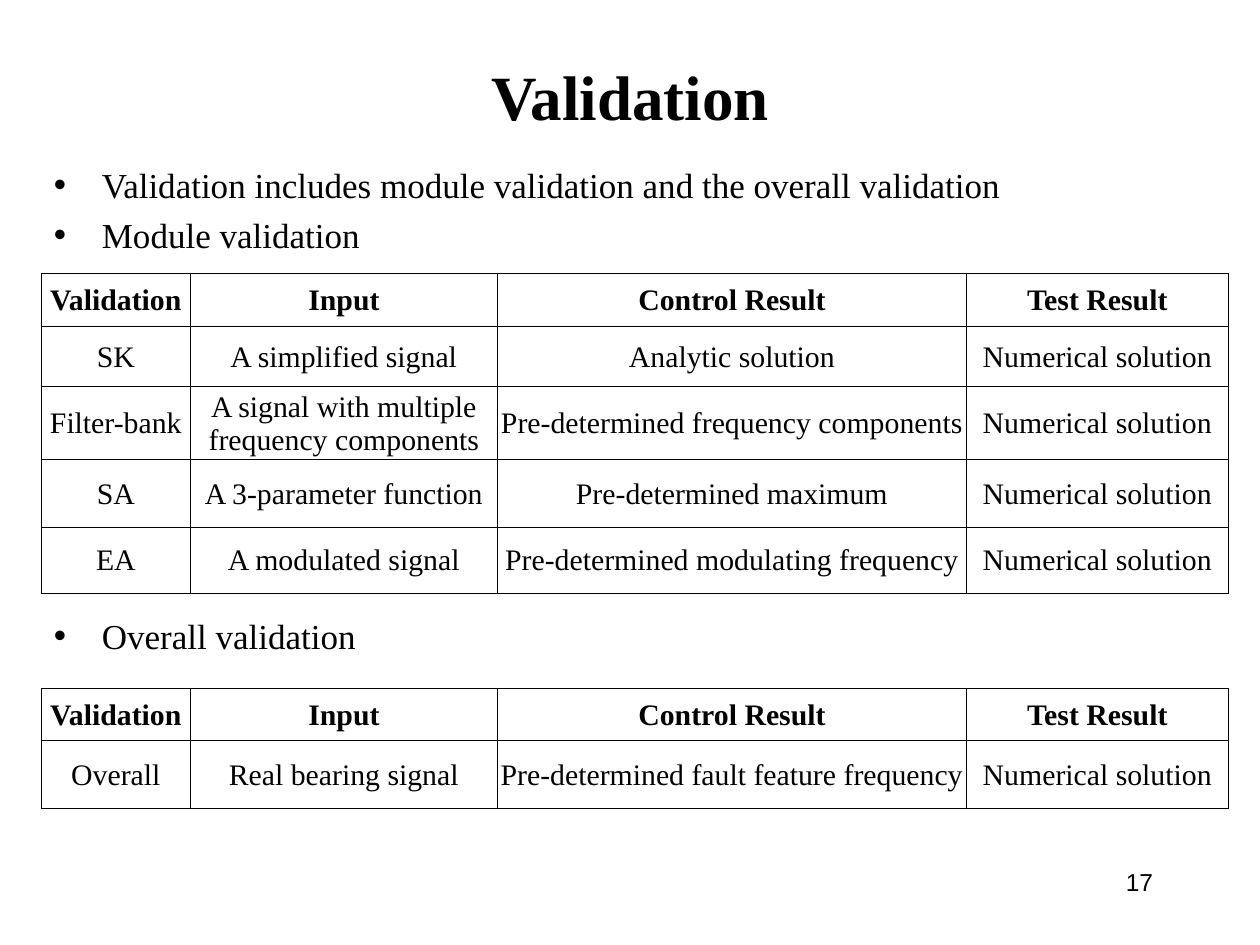
import lxml.etree
import pptx
import pptx.dml.color
import pptx.enum.text
import pptx.oxml.ns
import pptx.util

Inches = pptx.util.Inches
Pt = pptx.util.Pt
ALIGN = pptx.enum.text.PP_ALIGN
ANCHOR = pptx.enum.text.MSO_ANCHOR
qn = pptx.oxml.ns.qn

BLACK = "000000"
SERIF = "Times New Roman"
COLUMNS = [1.18, 2.44, 3.72, 2.08]
HEADER = ["Validation", "Input", "Control Result", "Test Result"]
NUMERICAL = "Numerical solution"
MODULES = [
    HEADER,
    ["SK", "A simplified signal", "Analytic solution", NUMERICAL],
    ["Filter-bank", "A signal with multiple frequency components",
     "Pre-determined frequency components", NUMERICAL],
    ["SA", "A 3-parameter function", "Pre-determined maximum", NUMERICAL],
    ["EA", "A modulated signal", "Pre-determined modulating frequency", NUMERICAL],
]
OVERALL = [
    HEADER,
    ["Overall", "Real bearing signal", "Pre-determined fault feature frequency", NUMERICAL],
]


def color(value):
    """Return the colour for a hex string."""
    return pptx.dml.color.RGBColor.from_string(value)


def write(p, text, size=20, font=SERIF, bold=False, align=ALIGN.LEFT, fill=BLACK):
    """Put formatted text into a paragraph."""
    p.alignment = align
    r = p.add_run()
    r.text = text
    r.font.size = Pt(size)
    r.font.name = font
    r.font.bold = bold
    r.font.color.rgb = color(fill)


def add_box(s, box, anchor=ANCHOR.TOP):
    """Add a wrapping text box and return its text frame."""
    tf = s.shapes.add_textbox(*map(Inches, box)).text_frame
    tf.word_wrap = True
    tf.vertical_anchor = anchor
    return tf


def add_title(s, box, text):
    """Add the centred slide title."""
    tf = add_box(s, box, ANCHOR.MIDDLE)
    write(tf.paragraphs[0], text, size=36, bold=True, align=ALIGN.CENTER)


def add_bullets(s, box, items):
    """Add a bulleted list with hanging indents."""
    tf = add_box(s, box)
    for i, item in enumerate(items):
        p = tf.add_paragraph() if i else tf.paragraphs[0]
        write(p, item)
        p.space_before = Pt(4.6)
        pPr = p._p.get_or_add_pPr()
        pPr.set("marL", str(Inches(0.38)))
        pPr.set("indent", str(Inches(-0.38)))
        lxml.etree.SubElement(pPr, qn("a:buFont"), typeface="Arial")
        lxml.etree.SubElement(pPr, qn("a:buChar"), char="•")


def add_borders(cell, width=0.5, line=BLACK):
    """Draw a thin line on all four sides of a cell."""
    tcPr = cell._tc.get_or_add_tcPr()
    for i, side in enumerate(("lnL", "lnR", "lnT", "lnB")):
        ln = lxml.etree.Element(qn("a:" + side), w=str(Pt(width)))
        fill = lxml.etree.SubElement(ln, qn("a:solidFill"))
        lxml.etree.SubElement(fill, qn("a:srgbClr"), val=line)
        tcPr.insert(i, ln)


def add_grid(s, left, top, heights, rows):
    """Add a bordered table with a bold first row."""
    frame = s.shapes.add_table(len(rows), len(COLUMNS), Inches(left), Inches(top),
                               Inches(sum(COLUMNS)), Inches(sum(heights)))
    table = frame.table
    table.horz_banding = False
    for column, width in zip(table.columns, COLUMNS):
        column.width = Inches(width)
    for i, (height, texts) in enumerate(zip(heights, rows)):
        table.rows[i].height = Inches(height)
        for j, text in enumerate(texts):
            cell = table.cell(i, j)
            cell.fill.background()
            cell.vertical_anchor = ANCHOR.MIDDLE
            cell.margin_left = cell.margin_right = cell.margin_top = Inches(0.01)
            cell.margin_bottom = 0
            write(cell.text_frame.paragraphs[0], text, size=17, bold=i == 0,
                  align=ALIGN.CENTER)
            add_borders(cell)


def add_number(s, box, text):
    """Add the slide number."""
    tf = add_box(s, box)
    write(tf.paragraphs[0], text, size=14, font="Arial", align=ALIGN.RIGHT)


def main():
    """Build the validation slide."""
    prs = pptx.Presentation()
    prs.slide_width, prs.slide_height = Inches(10), Inches(7.5)
    s = prs.slides.add_slide(prs.slide_layouts[6])
    add_title(s, (0.75, 0.42, 8.5, 0.67), "Validation")
    add_bullets(s, (0.33, 1.25, 9.38, 0.92), [
        "Validation includes module validation and the overall validation",
        "Module validation",
    ])
    add_bullets(s, (0.33, 4.83, 3.25, 0.44), ["Overall validation"])
    add_grid(s, 0.33, 2.17, [0.42, 0.48, 0.57, 0.54, 0.52], MODULES)
    add_grid(s, 0.33, 5.46, [0.42, 0.54], OVERALL)
    add_number(s, (7.17, 6.83, 2.08, 0.5), "17")
    prs.save("out.pptx")


if __name__ == "__main__":
    main()
